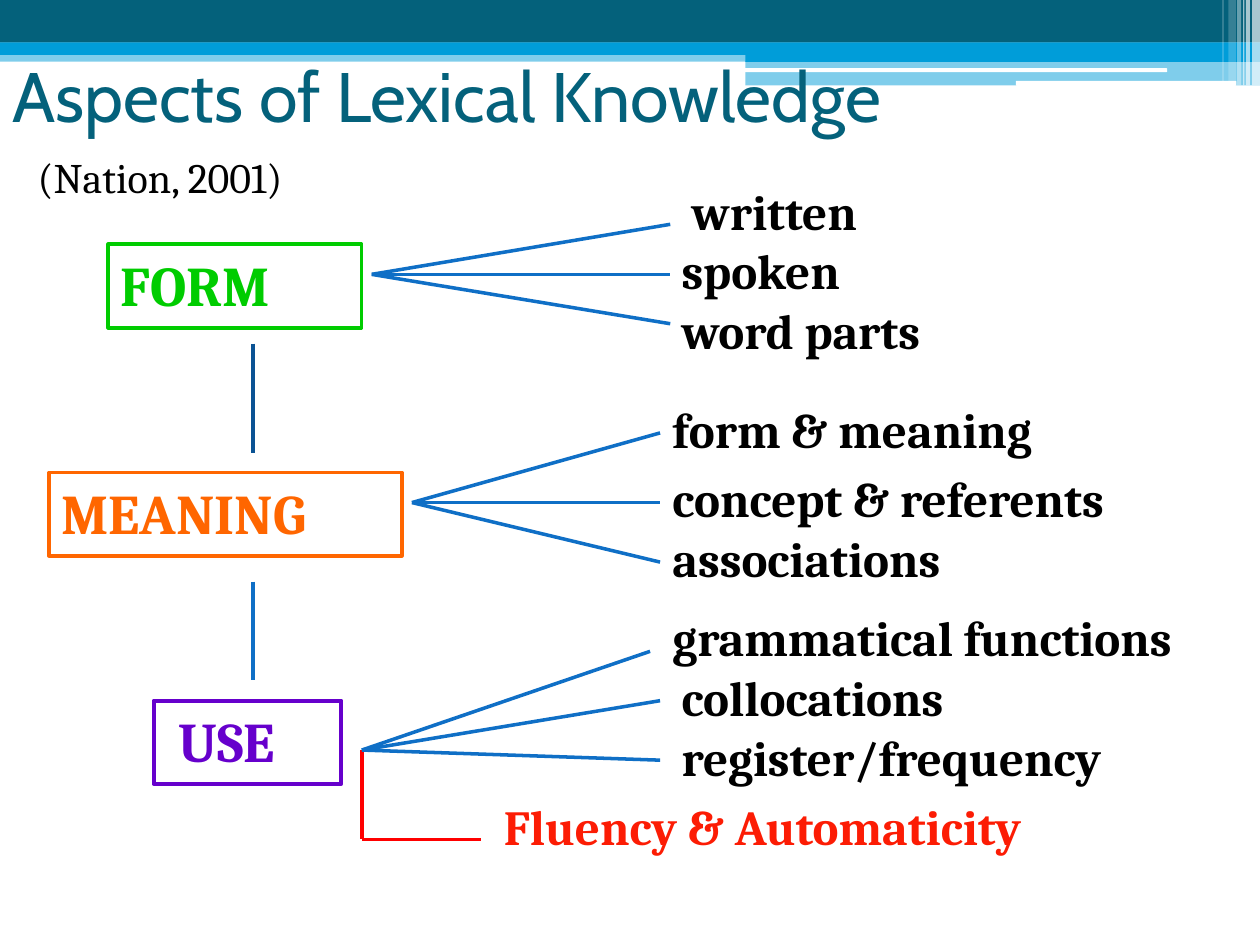
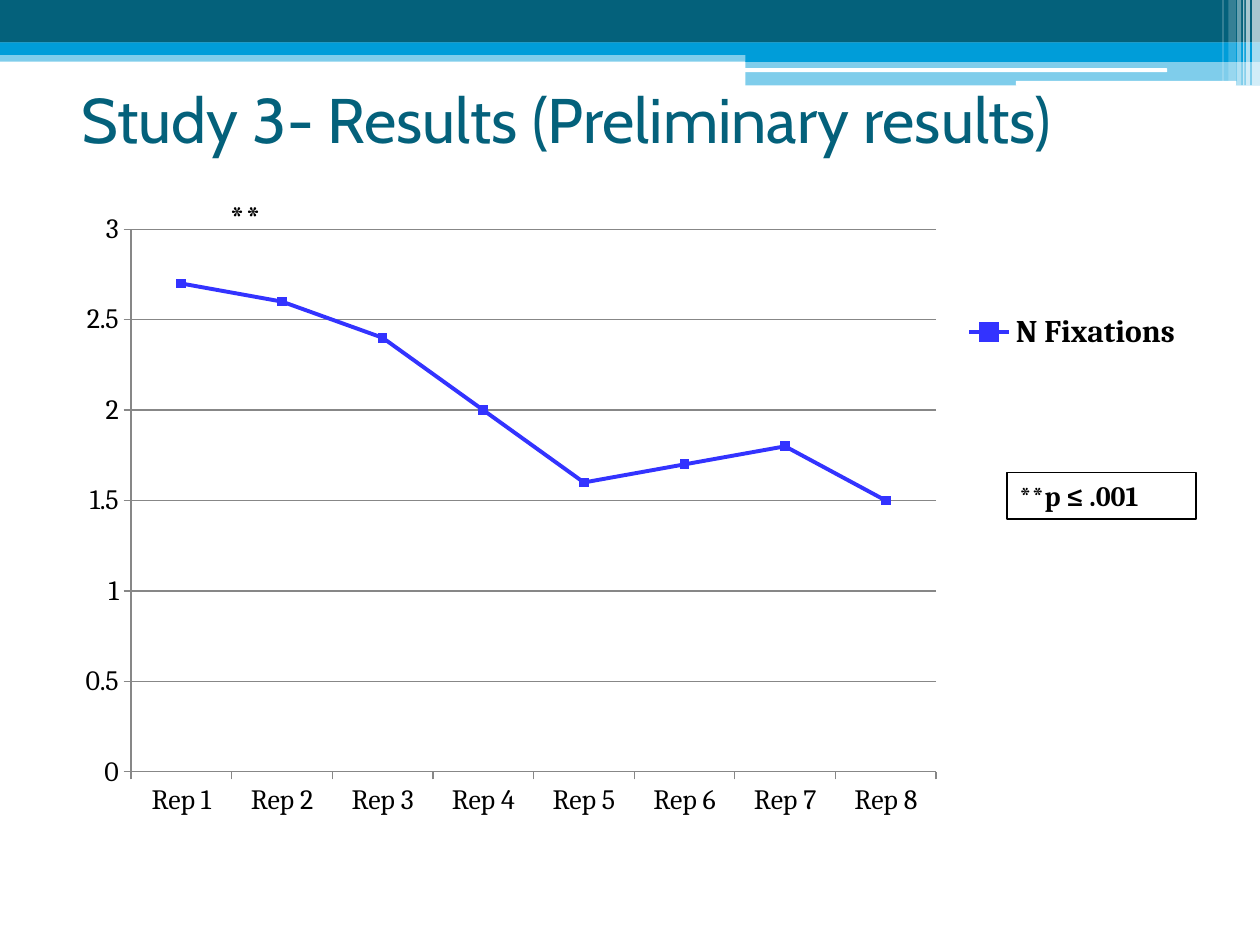
"""Builds two slides: a lexical knowledge diagram and a line chart of fixations."""
from lxml import etree
from pptx import Presentation
from pptx.chart.data import CategoryChartData
from pptx.dml.color import RGBColor
from pptx.enum.chart import XL_CHART_TYPE, XL_LEGEND_POSITION, XL_MARKER_STYLE, XL_TICK_MARK
from pptx.enum.shapes import MSO_CONNECTOR, MSO_SHAPE
from pptx.enum.text import MSO_ANCHOR
from pptx.oxml import parse_xml
from pptx.oxml.ns import nsdecls, qn
from pptx.util import Pt

RECT, ROUNDED = MSO_SHAPE.RECTANGLE, MSO_SHAPE.ROUNDED_RECTANGLE
STRAIGHT = MSO_CONNECTOR.STRAIGHT
TOP, MIDDLE = MSO_ANCHOR.TOP, MSO_ANCHOR.MIDDLE
LINE_MARKERS = XL_CHART_TYPE.LINE_MARKERS
LEGEND_RIGHT = XL_LEGEND_POSITION.RIGHT
SQUARE = XL_MARKER_STYLE.SQUARE
TICK_OUTSIDE, TICK_NONE = XL_TICK_MARK.OUTSIDE, XL_TICK_MARK.NONE

color = RGBColor.from_string
TEAL, SKY, WHITE, BLACK = "04617B", "009DD9", "FFFFFF", "000000"
GREEN, ORANGE, PURPLE = "00CC00", "FF6600", "6600CC"
BLUE, NAVY, RED, SCARLET = "0F6FC6", "0B5394", "FF0000", "FC1C04"
SERIES_BLUE, AXIS_GREY = "3333FF", "878787"
HEADING_FONT, BODY_FONT = "Cabin", "Cambria"

HEADER_BANDS = [
    (RECT, 0, 28.8, 720, 6.5, SKY, 50),
    (RECT, 0, 0, 720, 24.4, TEAL, 100),
    (RECT, 0, 24.2, 720, 7.2, SKY, 100),
    (RECT, 426, 28.2, 294, 7.2, SKY, 100),
    (RECT, 426, 34.8, 294, 14, SKY, 50),
    (ROUNDED, 425.5, 39, 241.5, 2.2, WHITE, 100),
    (ROUNDED, 580.5, 46.2, 126, 2.8, WHITE, 100),
    (RECT, 715.5, 0, 4.5, 48.8, WHITE, 65),
    (RECT, 712, 0, 2.2, 48.8, WHITE, 65),
    (RECT, 710.4, 0, 0.8, 48.8, WHITE, 60),
    (RECT, 707, 0, 2.2, 48.8, WHITE, 40),
    (RECT, 702, 0, 4.3, 46.2, WHITE, 20),
    (RECT, 698.5, 0, 0.8, 46.2, WHITE, 30),
]


def add_label(slide, text, left, top, width, height, size, ink=BLACK,
              bold=True, font=BODY_FONT, anchor=TOP, border=0):
    label = slide.shapes.add_textbox(Pt(left), Pt(top), Pt(width), Pt(height))
    if border:
        label.line.color.rgb = color(ink)
        label.line.width = Pt(border)
    frame = label.text_frame
    frame.word_wrap = True
    frame.vertical_anchor = anchor
    paragraph = frame.paragraphs[0]
    paragraph.text = text
    paragraph.font.name = font
    paragraph.font.size = Pt(size)
    paragraph.font.bold = bold
    paragraph.font.color.rgb = color(ink)


def add_titled_slide(deck, title, left, top, width, height, size):
    slide = deck.slides.add_slide(deck.slide_layouts[6])
    for outline, x, y, band_width, band_height, fill, opacity in HEADER_BANDS:
        band = slide.shapes.add_shape(outline, Pt(x), Pt(y), Pt(band_width), Pt(band_height))
        band.shadow.inherit = False
        band.line.fill.background()
        band.fill.solid()
        band.fill.fore_color.rgb = color(fill)
        if opacity < 100:
            solid = band.fill._xPr.find(qn("a:solidFill"))
            etree.SubElement(solid[0], qn("a:alpha"), val=str(opacity * 1000))
    add_label(slide, title, left, top, width, height, size, TEAL, False, HEADING_FONT, MIDDLE)
    return slide


deck = Presentation()
deck.slide_width, deck.slide_height = Pt(720), Pt(540)

knowledge = add_titled_slide(deck, "Aspects of Lexical Knowledge", 0, 0, 720, 108, 40)
add_label(knowledge, "(Nation, 2001)", 14.4, 82.8, 181.4, 36, 24, bold=False)

aspects = [
    ("FORM", GREEN, 61.9, 144.7, (212.4, 156.8), [
        ("written", 388.2, 100.2, 383, 128.2),
        ("spoken", 382.4, 134, 383, 156.8),
        ("word parts", 382.4, 168, 383, 185)]),
    ("MEANING", ORANGE, 28.1, 201.6, (235.4, 287.2), [
        ("form & meaning", 377.2, 225, 377.2, 247.4),
        ("concept & referents", 377.2, 264.4, 377.2, 287.2),
        ("associations", 377.2, 298.4, 377.2, 321.2)]),
    (" USE", PURPLE, 87.8, 107.3, (206.8, 428.6), [
        ("grammatical functions", 377.2, 343.6, 371.5, 372.2),
        ("collocations", 382.4, 378, 377.2, 400.4),
        ("register/frequency", 382.4, 412, 377.2, 434.4)]),
]
links = [
    (144.6, 196.4, 144.6, 258.6, NAVY),
    (144.6, 332.4, 144.6, 388.8, BLUE),
    (206.8, 428.6, 206.8, 479.6, RED),
    (206.8, 479.6, 275, 479.6, RED),
]
for row, (aspect, ink, left, width, hub, parts) in enumerate(aspects):
    add_label(knowledge, aspect, left, 139.6 + 130.4 * row, width, 47.6, 32, ink, border=2.25)
    for part, part_left, part_top, tip_x, tip_y in parts:
        add_label(knowledge, part, part_left, part_top, 335, 41, 28)
        links.append((*hub, tip_x, tip_y, BLUE))
add_label(knowledge, "Fluency & Automaticity", 280.8, 451.6, 332, 41, 28, SCARLET)

for start_x, start_y, end_x, end_y, ink in links:
    link = knowledge.shapes.add_connector(STRAIGHT, Pt(start_x), Pt(start_y), Pt(end_x), Pt(end_y))
    link.line.color.rgb = color(ink)
    link.line.width = Pt(2)
    etree.SubElement(link._element.spPr, qn("a:effectLst"))

results = add_titled_slide(deck, "Study 3- Results (Preliminary results)", 39.6, 22.4, 648, 90, 36)

fixations = CategoryChartData()
fixations.categories = [f"Rep {number}" for number in range(1, 9)]
fixations.add_series("N Fixations", [2.7, 2.6, 2.4, 2, 1.6, 1.7, 1.8, 1.5])
chart = results.shapes.add_chart(
    LINE_MARKERS, Pt(36), Pt(116.8), Pt(648), Pt(356.4), fixations).chart
chart.has_title = False
chart.font.name = BODY_FONT
chart.font.size = Pt(10)
chart.font.color.rgb = color(BLACK)
chart.plots[0].vary_by_categories = False

fixation_line = chart.plots[0].series[0]
fixation_line.smooth = False
fixation_line.format.line.color.rgb = color(SERIES_BLUE)
fixation_line.format.line.width = Pt(2.25)
fixation_line.marker.style = SQUARE
fixation_line.marker.size = 5
fixation_line.marker.format.fill.solid()
fixation_line.marker.format.fill.fore_color.rgb = color(SERIES_BLUE)
fixation_line.marker.format.line.color.rgb = color(SERIES_BLUE)

scale = chart.value_axis
scale.minimum_scale, scale.maximum_scale, scale.major_unit = 0, 3, 0.5
scale.has_major_gridlines = True
scale.tick_labels.number_format = "General"
scale.tick_labels.number_format_is_linked = False
for axis in (scale, chart.category_axis):
    axis.tick_labels.font.size = Pt(16)
    axis.major_tick_mark, axis.minor_tick_mark = TICK_OUTSIDE, TICK_NONE
for rule in (scale, chart.category_axis, scale.major_gridlines):
    rule.format.line.color.rgb = color(AXIS_GREY)
    rule.format.line.width = Pt(0.75)

chart.has_legend = True
chart.legend.position = LEGEND_RIGHT
chart.legend.include_in_layout = False
chart.legend.font.size = Pt(18)
chart.legend.font.bold = True

for holder, position, target, x, y, w, h in [
    (chart._chartSpace.chart.plotArea, 0, '<c:layoutTarget val="inner"/>', 0.06, 0.04, 0.71, 0.87),
    (chart.legend._element, 1, "", 0.79, 0.16, 0.2, 0.09),
]:
    for automatic_layout in holder.findall(qn("c:layout")):
        holder.remove(automatic_layout)
    holder.insert(position, parse_xml(
        f'<c:layout {nsdecls("c")}><c:manualLayout>{target}'
        '<c:xMode val="edge"/><c:yMode val="edge"/>'
        f'<c:x val="{x}"/><c:y val="{y}"/><c:w val="{w}"/><c:h val="{h}"/>'
        '</c:manualLayout></c:layout>'))

add_label(results, "**", 124.2, 108.2, 33.8, 31.6, 20)
add_label(results, "**p ≤ .001", 575.4, 270, 108, 26.6, 16, border=0.75)

deck.save("out.pptx")
